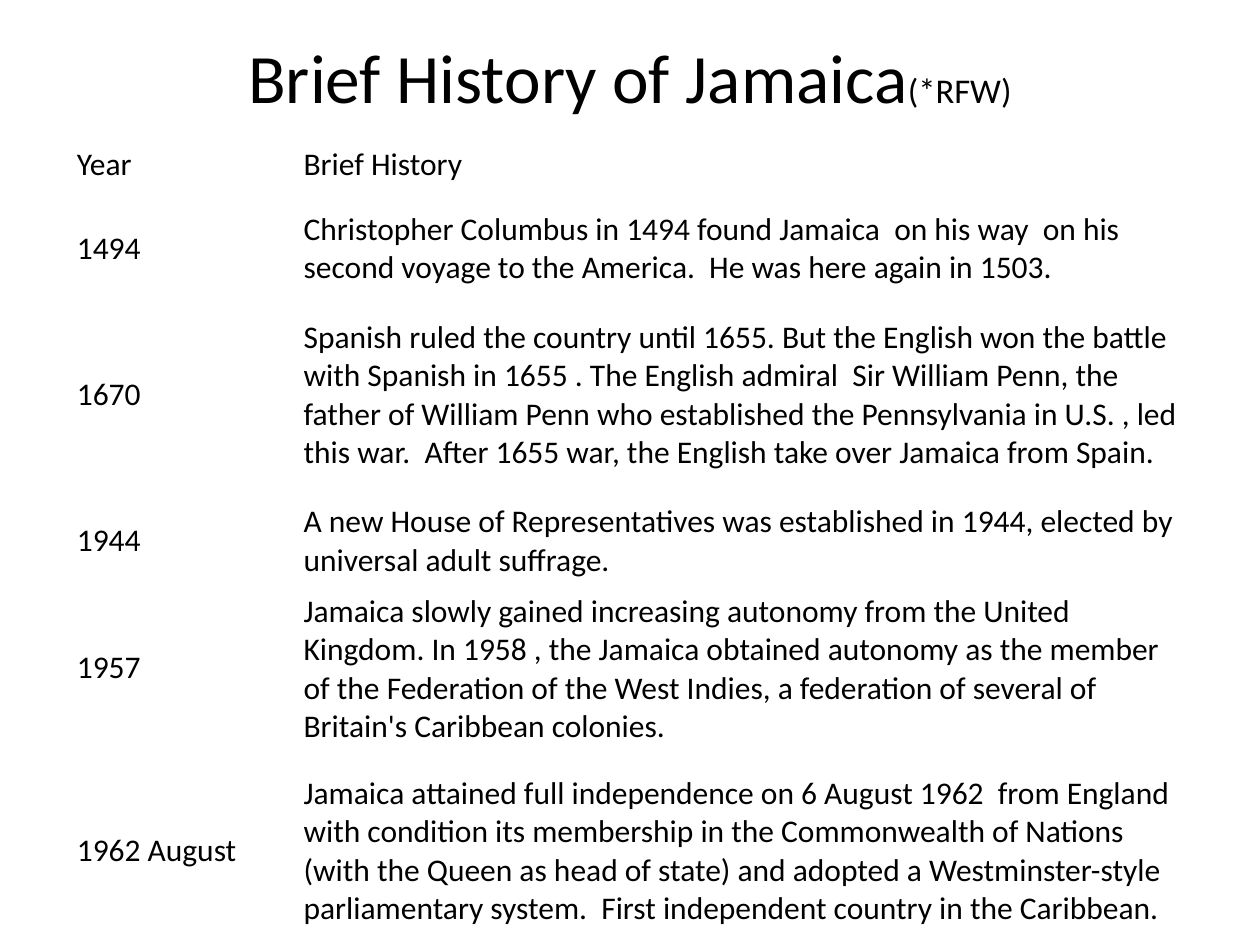
import pptx
import pptx.util
from pptx.dml.color import RGBColor
from pptx.enum.text import MSO_ANCHOR, PP_ALIGN

FONT = "Calibri"
BLACK = RGBColor(0, 0, 0)

TITLE = [("Brief History of Jamaica", 39.6), ("(*RFW)", 19.8)]

# Year, event, row height in inches
HISTORY = [
    ("Year", "Brief History", 0.63),
    ("1494", "Christopher Columbus in 1494 found Jamaica  on his way  on his "
     "second voyage to the America.  He was here again in 1503.", 0.71),
    ("1670", "Spanish ruled the country until 1655. But the English won the battle "
     "with Spanish in 1655 . The English admiral  Sir William Penn, the father of "
     "William Penn who established the Pennsylvania in U.S. , led this war.  After "
     "1655 war, the English take over Jamaica from Spain.", 1.61),
    ("1944", "A new House of Representatives was established in 1944, elected by "
     "universal adult suffrage.", 0.71),
    ("1957", "Jamaica slowly gained increasing autonomy from the United Kingdom. "
     "In 1958 , the Jamaica obtained autonomy as the member of the Federation of "
     "the West Indies, a federation of several of Britain's Caribbean colonies.", 1.25),
    ("1962 August", "Jamaica attained full independence on 6 August 1962  from "
     "England with condition its membership in the Commonwealth of Nations (with "
     "the Queen as head of state) and adopted a Westminster-style parliamentary "
     "system.  First independent country in the Caribbean.", 1.61),
]
COLUMN_SHARES = (0.2, 0.8)
CONTENT_WIDTH = 9


def style(r, size):
    r.font.name = FONT
    r.font.size = pptx.util.Pt(size)
    r.font.color.rgb = BLACK


def add_title(s):
    box = s.shapes.add_textbox(*map(pptx.util.Inches, (0.5, 0.3, CONTENT_WIDTH, 0.61)))
    tf = box.text_frame
    tf.word_wrap = True
    tf.vertical_anchor = MSO_ANCHOR.MIDDLE
    p = tf.paragraphs[0]
    p.alignment = PP_ALIGN.CENTER
    for text, size in TITLE:
        r = p.add_run()
        r.text = text
        style(r, size)


def add_history(s):
    height = sum(row[-1] for row in HISTORY)
    frame = s.shapes.add_table(
        len(HISTORY), len(COLUMN_SHARES),
        *map(pptx.util.Inches, (0.51, 0.99, CONTENT_WIDTH, height)))
    table = frame.table
    table.first_row = table.horz_banding = False
    for column, share in zip(table.columns, COLUMN_SHARES):
        column.width = pptx.util.Inches(CONTENT_WIDTH * share)
    for row, (*texts, row_height) in zip(table.rows, HISTORY):
        row.height = pptx.util.Inches(row_height)
        for cell, text in zip(row.cells, texts):
            cell.fill.background()
            cell.vertical_anchor = MSO_ANCHOR.MIDDLE
            cell.text_frame.text = text
            style(cell.text_frame.paragraphs[0].runs[0], 18)


def main():
    prs = pptx.Presentation()
    prs.slide_width = pptx.util.Inches(10)
    prs.slide_height = pptx.util.Inches(7.5)
    s = prs.slides.add_slide(prs.slide_layouts[6])
    add_title(s)
    add_history(s)
    prs.save("out.pptx")


if __name__ == "__main__":
    main()
